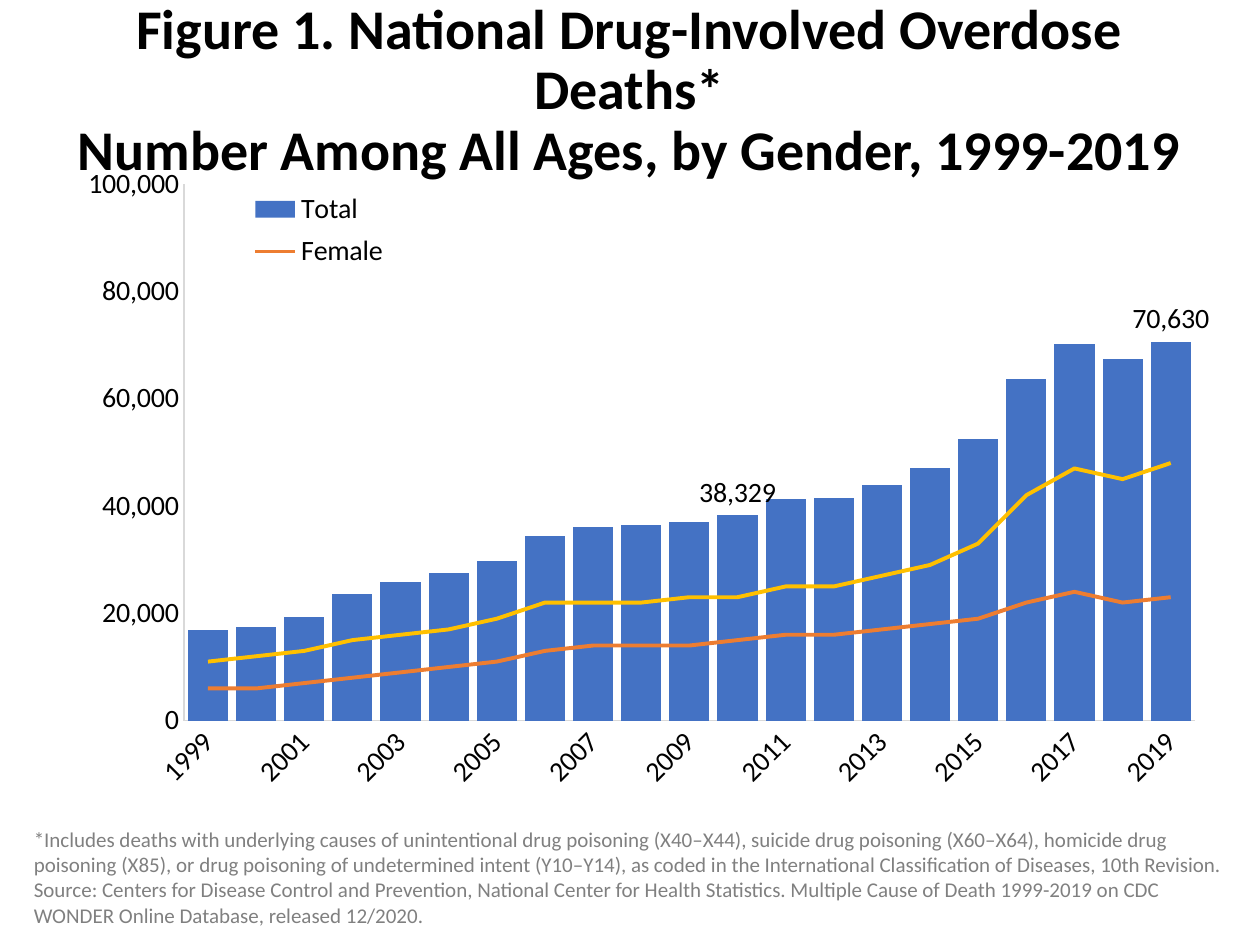
"""Build a slide charting national drug-involved overdose deaths by gender, 1999-2019."""
import lxml.etree
import pptx
import pptx.chart.data
import pptx.dml.color
import pptx.enum.chart
import pptx.enum.text
import pptx.oxml
import pptx.oxml.ns
import pptx.util

Inches = pptx.util.Inches
qn = pptx.oxml.ns.qn
COLORS = {"text": "000000", "note": "808080", "axis": "D9D9D9",
          "Total": "4472C4", "Female": "ED7D31", "Male": "FFC000"}
RGB = {name: pptx.dml.color.RGBColor.from_string(value) for name, value in COLORS.items()}
FONT = "Calibri"


def write(page, place, paragraphs, size, color, bold=False, spacing=1.0,
          align=pptx.enum.text.PP_ALIGN.LEFT, anchor=pptx.enum.text.MSO_ANCHOR.TOP):
    box = page.shapes.add_textbox(*[Inches(length) for length in place])
    frame = box.text_frame
    frame.word_wrap = True
    frame.vertical_anchor = anchor
    for number, text in enumerate(paragraphs):
        para = frame.add_paragraph() if number else frame.paragraphs[0]
        para.alignment = align
        para.line_spacing = spacing
        for row, line in enumerate(text.split("\n")):
            if row:
                para.add_line_break()
            span = para.add_run()
            span.text = line
            span.font.name = FONT
            span.font.size = pptx.util.Pt(size)
            span.font.bold = bold
            span.font.color.rgb = RGB[color]


def make_layout(x, y, w, h, inner=False):
    layout = pptx.oxml.parse_xml(
        '<c:layout xmlns:c="http://schemas.openxmlformats.org/drawingml/2006/chart">'
        "<c:manualLayout/></c:layout>")
    settings = [("layoutTarget", "inner")] if inner else []
    settings += [("xMode", "edge"), ("yMode", "edge"), ("x", x), ("y", y), ("w", w), ("h", h)]
    for tag, value in settings:
        lxml.etree.SubElement(layout[0], qn("c:" + tag)).set("val", str(value))
    return layout


deck = pptx.Presentation()
deck.slide_width = Inches(10)
deck.slide_height = Inches(7.5)
page = deck.slides.add_slide(deck.slide_layouts[6])

write(page, (0.42, 0, 9.15, 1.45),
      ["Figure 1. National Drug-Involved Overdose Deaths*\n"
       "Number Among All Ages, by Gender, 1999-2019"],
      size=32, color="text", bold=True, spacing=0.9,
      align=pptx.enum.text.PP_ALIGN.CENTER, anchor=pptx.enum.text.MSO_ANCHOR.MIDDLE)

deaths = {
    "Total": [16849, 17415, 19394, 23518, 25785, 27424, 29813, 34425, 36010, 36450, 37004,
              38329, 41340, 41502, 43982, 47055, 52404, 63632, 70237, 67367, 70630],
    "Female": [6000, 6000, 7000, 8000, 9000, 10000, 11000, 13000, 14000, 14000, 14000,
               15000, 16000, 16000, 17000, 18000, 19000, 22000, 24000, 22000, 23000],
    "Male": [11000, 12000, 13000, 15000, 16000, 17000, 19000, 22000, 22000, 22000, 23000,
             23000, 25000, 25000, 27000, 29000, 33000, 42000, 47000, 45000, 48000],
}
data = pptx.chart.data.CategoryChartData(number_format="#,##0")
data.categories = [str(year) for year in range(1999, 2020)]
for name, values in deaths.items():
    data.add_series(name, values)
chart = page.shapes.add_chart(
    pptx.enum.chart.XL_CHART_TYPE.COLUMN_CLUSTERED,
    Inches(0.34), Inches(1.25), Inches(9.33), Inches(5.26), data).chart
chart.has_title = False
chart.font.name = FONT
chart.font.size = pptx.util.Pt(16)
chart.font.color.rgb = RGB["text"]

columns = chart.plots[0]
columns.gap_width = 20
columns.overlap = -2
columns.vary_by_categories = False
total = columns.series[0]
total.format.fill.solid()
total.format.fill.fore_color.rgb = RGB["Total"]
total.data_labels.show_value = False
for year in (2010, 2019):
    label = total.points[year - 1999].data_label
    label.position = pptx.enum.chart.XL_LABEL_POSITION.OUTSIDE_END
    label.font.size = pptx.util.Pt(16)

plot_area = chart.element.find(".//" + qn("c:plotArea"))
bar_chart = plot_area.find(qn("c:barChart"))
line_chart = pptx.oxml.parse_xml(
    '<c:lineChart xmlns:c="http://schemas.openxmlformats.org/drawingml/2006/chart">'
    '<c:grouping val="standard"/><c:varyColors val="0"/></c:lineChart>')
for series in bar_chart.findall(qn("c:ser"))[1:]:
    for setting in series.findall(qn("c:invertIfNegative")):
        series.remove(setting)
    line_chart.append(series)
lxml.etree.SubElement(line_chart, qn("c:marker")).set("val", "1")
for axis_id in bar_chart.findall(qn("c:axId")):
    lxml.etree.SubElement(line_chart, qn("c:axId")).set("val", axis_id.get("val"))
bar_chart.addnext(line_chart)

for series in chart.plots[1].series:
    series.smooth = False
    series.marker.style = pptx.enum.chart.XL_MARKER_STYLE.NONE
    series.format.line.width = pptx.util.Pt(2.25)
    series.format.line.color.rgb = RGB[series.name]

for axis in (chart.category_axis, chart.value_axis):
    axis.has_major_gridlines = False
    axis.major_tick_mark = pptx.enum.chart.XL_TICK_MARK.NONE
    axis.minor_tick_mark = pptx.enum.chart.XL_TICK_MARK.NONE
    axis.format.line.width = pptx.util.Pt(0.75)
    axis.format.line.color.rgb = RGB["axis"]
    axis.tick_labels.font.name = FONT
    axis.tick_labels.font.size = pptx.util.Pt(16)
    axis.tick_labels.font.color.rgb = RGB["text"]
chart.value_axis.minimum_scale = 0
chart.value_axis.maximum_scale = 100000
chart.value_axis.major_unit = 20000
chart.value_axis.tick_labels.number_format = "#,##0"
chart.value_axis.tick_labels.number_format_is_linked = False

year_axis = plot_area.find(qn("c:catAx"))
year_axis.find(qn("c:txPr")).find(qn("a:bodyPr")).set("rot", "-2700000")
label_skip = lxml.etree.Element(qn("c:tickLblSkip"))
label_skip.set("val", "2")
year_axis.find(qn("c:noMultiLvlLbl")).addprevious(label_skip)

chart.has_legend = True
legend = chart.legend
legend.position = pptx.enum.chart.XL_LEGEND_POSITION.RIGHT
legend.include_in_layout = False
legend.font.name = FONT
legend.font.size = pptx.util.Pt(16)
legend.font.color.rgb = RGB["text"]
legend_xml = chart.element.find(".//" + qn("c:legend"))
for parent in (plot_area, legend_xml):
    for layout in parent.findall(qn("c:layout")):
        parent.remove(layout)
plot_area.insert(0, make_layout(0.12, 0.04, 0.86, 0.81, inner=True))
hidden_entry = lxml.etree.Element(qn("c:legendEntry"))
lxml.etree.SubElement(hidden_entry, qn("c:idx")).set("val", "2")
lxml.etree.SubElement(hidden_entry, qn("c:delete")).set("val", "1")
overlay = legend_xml.find(qn("c:overlay"))
overlay.addprevious(hidden_entry)
overlay.addprevious(make_layout(0.15, 0.04, 0.17, 0.14))

write(page, (0.17, 6.51, 9.66, 0.91),
      ["*Includes deaths with underlying causes of unintentional drug poisoning (X40–X44), "
       "suicide drug poisoning (X60–X64), homicide drug poisoning (X85), or drug poisoning of "
       "undetermined intent (Y10–Y14), as coded in the International Classification of "
       "Diseases, 10th Revision.",
       "Source: Centers for Disease Control and Prevention, National Center for Health "
       "Statistics. Multiple Cause of Death 1999-2019 on CDC WONDER Online Database, "
       "released 12/2020."],
      size=12, color="note")

deck.save("out.pptx")
